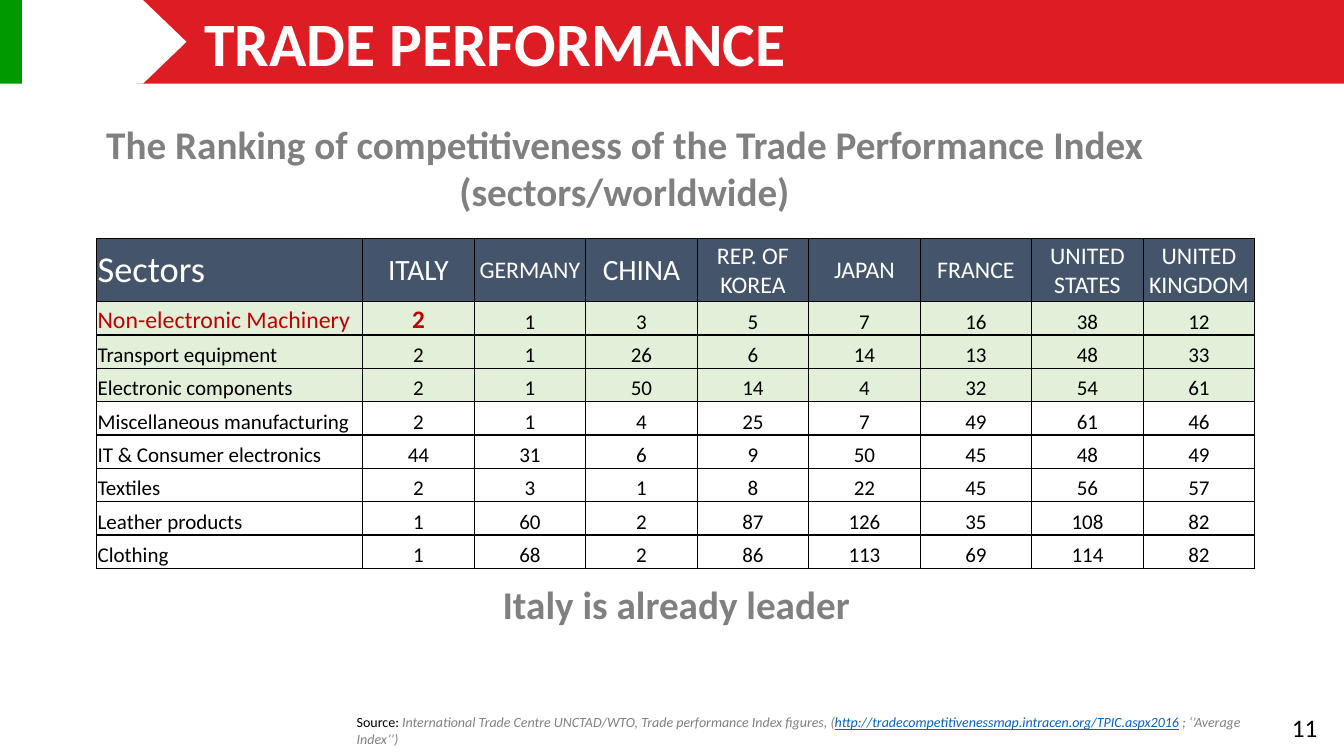
from dataclasses import dataclass

from lxml import etree
from pptx import Presentation
from pptx.dml.color import RGBColor
from pptx.enum.shapes import MSO_SHAPE
from pptx.enum.text import MSO_ANCHOR, MSO_AUTO_SIZE, PP_ALIGN
from pptx.oxml.ns import qn
from pptx.util import Cm, Pt

PENTAGON = MSO_SHAPE.PENTAGON
LEFT, CENTER = PP_ALIGN.LEFT, PP_ALIGN.CENTER
MIDDLE, BOTTOM = MSO_ANCHOR.MIDDLE, MSO_ANCHOR.BOTTOM
GROW = MSO_AUTO_SIZE.SHAPE_TO_FIT_TEXT

# Content
TITLE = "TRADE PERFORMANCE"
SUBTITLE = "The Ranking of competitiveness of the Trade Performance Index (sectors/worldwide)"
CONCLUSION = "Italy is already leader"
PAGE_NUMBER = "11"
SOURCE_LABEL = "Source: "
SOURCE_NAME = "International Trade Centre UNCTAD/WTO, Trade performance Index figures, ("
SOURCE_ADDRESS = "http://tradecompetitivenessmap.intracen.org/TPIC.aspx2016"
SOURCE_END = " ; ‘’Average Index’’)"

HEADINGS = ["Sectors", "ITALY", "GERMANY", "CHINA", "REP. OF KOREA",
            "JAPAN", "FRANCE", "UNITED STATES", "UNITED KINGDOM"]
RANKINGS = [
    ("Non-electronic Machinery", 2, 1, 3, 5, 7, 16, 38, 12),
    ("Transport equipment", 2, 1, 26, 6, 14, 13, 48, 33),
    ("Electronic components", 2, 1, 50, 14, 4, 32, 54, 61),
    ("Miscellaneous manufacturing", 2, 1, 4, 25, 7, 49, 61, 46),
    ("IT & Consumer electronics", 44, 31, 6, 9, 50, 45, 48, 49),
    ("Textiles", 2, 3, 1, 8, 22, 45, 56, 57),
    ("Leather products", 1, 60, 2, 87, 126, 35, 108, 82),
    ("Clothing", 1, 68, 2, 86, 113, 69, 114, 82),
]
SHADED_ROWS = 3


@dataclass(frozen=True)
class Theme:
    font: str = "Calibri"
    red: str = "DE1C23"
    green: str = "009900"
    white: str = "FFFFFF"
    black: str = "000000"
    grey: str = "808080"
    link: str = "0563C1"
    header: str = "44546A"
    shaded: str = "E2F0D9"
    highlight: str = "C00000"
    title: int = 44
    statement: int = 28
    page: int = 18
    source: int = 10
    sector_heading: int = 26
    main_country: int = 21
    country: int = 17
    rank: int = 15


THEME = Theme()
HEADING_SIZES = {"Sectors": THEME.sector_heading,
                 "ITALY": THEME.main_country, "CHINA": THEME.main_country}

# Layout, in centimetres
SLIDE_W, SLIDE_H = 33.87, 19.05
BAND_H = 2.11
FLAG_BANDS = [  # left, width, point depth, colour
    (3.43, SLIDE_W - 3.43, 0, THEME.red),
    (0, 0.56, 0, THEME.green),
    (0.56, 4.14, 0.52, THEME.white),
]
TABLE_LEFT, TABLE_TOP = 2.43, 6.0
SECTOR_W, COUNTRY_W = 6.71, 2.81
HEADING_H, ROW_H = 1.6, 0.84
CELL_MARGIN = 0.03


def add_run(paragraph, text, size, color, bold=False, italic=False, underline=False):
    run = paragraph.add_run()
    run.text = text
    font = run.font
    font.name, font.size = THEME.font, Pt(size)
    font.bold, font.italic, font.underline = bold, italic, underline
    font.color.rgb = RGBColor.from_string(color)


def add_text(slide, left, top, width, height, align=LEFT):
    frame = slide.shapes.add_textbox(Cm(left), Cm(top), Cm(width), Cm(height)).text_frame
    frame.word_wrap = True
    frame.auto_size = GROW
    frame.paragraphs[0].alignment = align
    return frame.paragraphs[0]


def add_borders(cell):
    properties = cell._tc.get_or_add_tcPr()
    for position, side in enumerate(("a:lnL", "a:lnR", "a:lnT", "a:lnB")):
        border = etree.Element(qn(side), w=str(Pt(1)))
        fill = etree.SubElement(border, qn("a:solidFill"))
        etree.SubElement(fill, qn("a:srgbClr"), val=THEME.black)
        properties.insert(position, border)


def cell_style(row, column, text):
    """Return the size, colour, weight and fill of a table cell."""
    if row == 0:
        return HEADING_SIZES.get(text, THEME.country), THEME.white, False, THEME.header
    fill = THEME.shaded if row <= SHADED_ROWS else None
    if row == 1 and column == 0:
        return THEME.country, THEME.highlight, False, fill
    if row == 1 and column == 1:
        return THEME.page, THEME.highlight, True, fill
    return THEME.rank, THEME.black, False, fill


def add_rankings(slide):
    rows = [HEADINGS, *RANKINGS]
    widths = [SECTOR_W] + [COUNTRY_W] * (len(HEADINGS) - 1)
    heights = [HEADING_H] + [ROW_H] * len(RANKINGS)
    table = slide.shapes.add_table(
        len(rows), len(widths), Cm(TABLE_LEFT), Cm(TABLE_TOP),
        Cm(sum(widths)), Cm(sum(heights))).table
    table.first_row = table.horz_banding = False
    for column, width in zip(table.columns, widths):
        column.width = Cm(width)
    for table_row, height in zip(table.rows, heights):
        table_row.height = Cm(height)

    for r, values in enumerate(rows):
        for c, value in enumerate(values):
            cell = table.cell(r, c)
            size, color, bold, fill = cell_style(r, c, value)
            cell.margin_left = cell.margin_right = cell.margin_top = Cm(CELL_MARGIN)
            cell.margin_bottom = 0
            cell.vertical_anchor = MIDDLE if r == 0 else BOTTOM
            if fill:
                cell.fill.solid()
                cell.fill.fore_color.rgb = RGBColor.from_string(fill)
            else:
                cell.fill.background()
            add_borders(cell)
            paragraph = cell.text_frame.paragraphs[0]
            paragraph.alignment = CENTER if c else LEFT
            add_run(paragraph, str(value), size, color, bold)


def main():
    deck = Presentation()
    deck.slide_width, deck.slide_height = Cm(SLIDE_W), Cm(SLIDE_H)
    slide = deck.slides.add_slide(deck.slide_layouts[6])

    # Flag-coloured title band
    for left, width, point, color in FLAG_BANDS:
        band = slide.shapes.add_shape(PENTAGON, Cm(left), 0, Cm(width), Cm(BAND_H))
        band.adjustments[0] = point
        band.shadow.inherit = False
        band.fill.solid()
        band.fill.fore_color.rgb = RGBColor.from_string(color)
        band.line.fill.background()

    # Page number, title and statements
    add_run(add_text(slide, 32.31, 17.83, 1.56, 1.02), PAGE_NUMBER, THEME.page, THEME.black)
    add_run(add_text(slide, 4.9, 0, 26.92, 2.13), TITLE, THEME.title, THEME.white, bold=True)
    add_run(add_text(slide, 2.21, 2.9, 27.05, 2.64, CENTER), SUBTITLE,
            THEME.statement, THEME.grey, bold=True)
    add_run(add_text(slide, 7.59, 14.5, 18.9, 1.45, CENTER), CONCLUSION,
            THEME.statement, THEME.grey, bold=True)

    # Source line
    source = add_text(slide, 8.74, 17.86, 23.09, 1.12)
    add_run(source, SOURCE_LABEL, THEME.source, THEME.black)
    add_run(source, SOURCE_NAME, THEME.source, THEME.grey, italic=True)
    add_run(source, SOURCE_ADDRESS, THEME.source, THEME.link, italic=True, underline=True)
    add_run(source, SOURCE_END, THEME.source, THEME.grey, italic=True)

    # Ranking table
    add_rankings(slide)

    deck.save("out.pptx")


if __name__ == "__main__":
    main()
